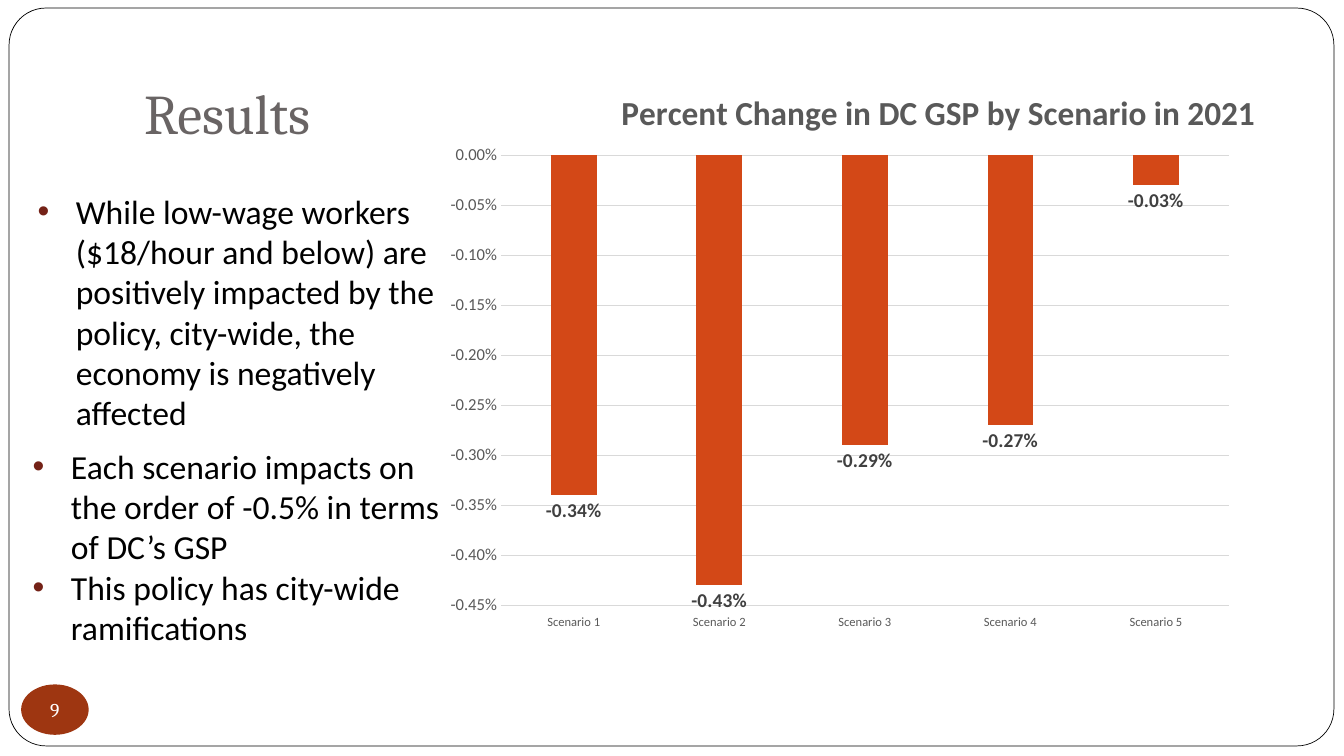
from lxml import etree
from pptx import Presentation
from pptx.chart.data import CategoryChartData
from pptx.dml.color import RGBColor
from pptx.enum.chart import XL_CHART_TYPE, XL_LABEL_POSITION, XL_TICK_LABEL_POSITION, XL_TICK_MARK
from pptx.enum.shapes import MSO_SHAPE
from pptx.enum.text import MSO_ANCHOR, MSO_AUTO_SIZE, PP_ALIGN
from pptx.oxml.ns import qn
from pptx.util import Inches, Pt

WHITE = RGBColor(0xFF, 0xFF, 0xFF)
BLACK = RGBColor(0x00, 0x00, 0x00)
TITLE_GREY = RGBColor(0x69, 0x64, 0x64)
BULLET_RED = RGBColor(0x74, 0x22, 0x17)
BADGE_RED = RGBColor(0x9E, 0x36, 0x11)
BAR_ORANGE = RGBColor(0xD3, 0x48, 0x17)
AXIS_GREY = RGBColor(0x59, 0x59, 0x59)
LABEL_GREY = RGBColor(0x40, 0x40, 0x40)
GRID_GREY = RGBColor(0xD9, 0xD9, 0xD9)

SCENARIO_CHANGES = [-0.0034, -0.0043, -0.0029, -0.0027, -0.0003]


def style_font(font, size, color, name="Calibri", bold=False):
    font.name, font.size, font.bold = name, Pt(size), bold
    font.color.rgb = color


def write(p, text, size=24, color=BLACK, name="Calibri", align=PP_ALIGN.LEFT):
    p.alignment = align
    p.space_before = Pt(0)
    r = p.add_run()
    r.text = text
    style_font(r.font, size, color, name)


def place(sp, left, top, width, height):
    sp.left, sp.top = Inches(left), Inches(top)
    sp.width, sp.height = Inches(width), Inches(height)


def add_bullet(p):
    pPr = p._p.get_or_add_pPr()
    pPr.set("marL", str(Inches(0.38)))
    pPr.set("indent", str(Inches(-0.38)))
    color = etree.SubElement(pPr, qn("a:buClr"))
    etree.SubElement(color, qn("a:srgbClr")).set("val", str(BULLET_RED))
    etree.SubElement(pPr, qn("a:buFont")).set("typeface", "Arial")
    etree.SubElement(pPr, qn("a:buChar")).set("char", "•")


def fill_list(sp, top, height, items):
    place(sp, 0.13, top, 4.42, height)
    tf = sp.text_frame
    tf.word_wrap = True
    tf.auto_size = MSO_AUTO_SIZE.SHAPE_TO_FIT_TEXT
    tf.vertical_anchor = MSO_ANCHOR.MIDDLE
    tf._txBody.bodyPr.set("anchorCtr", "1")
    for i, item in enumerate(items):
        p = tf.add_paragraph() if i else tf.paragraphs[0]
        write(p, item)
        add_bullet(p)


def fill_title(sp, text):
    place(sp, 1.33, 0.3, 11.33, 1.25)
    tf = sp.text_frame
    tf.auto_size = MSO_AUTO_SIZE.NONE
    tf.vertical_anchor = MSO_ANCHOR.BOTTOM
    tf.margin_bottom = Inches(0.1)
    write(tf.paragraphs[0], text, 40, TITLE_GREY, "Cambria")


def add_frame(slide):
    sp = slide.shapes.add_shape(MSO_SHAPE.ROUNDED_RECTANGLE, Inches(0.09), Inches(0.08),
                                Inches(13.14), Inches(7.32))
    sp.adjustments[0] = 0.05
    sp.shadow.inherit = False
    sp.fill.solid()
    sp.fill.fore_color.rgb = WHITE
    sp.line.color.rgb = BLACK
    sp.line.width = Pt(0.5)
    slide.shapes._spTree.insert(2, sp._element)


def add_badge(slide, number):
    sp = slide.shapes.add_shape(MSO_SHAPE.OVAL, Inches(0.21), Inches(6.79),
                                Inches(0.67), Inches(0.5))
    sp.shadow.inherit = False
    sp.fill.solid()
    sp.fill.fore_color.rgb = BADGE_RED
    sp.line.fill.background()
    tf = sp.text_frame
    tf.word_wrap = False
    tf.vertical_anchor = MSO_ANCHOR.MIDDLE
    tf.margin_left = tf.margin_right = tf.margin_top = tf.margin_bottom = 0
    write(tf.paragraphs[0], number, 14, WHITE, "Cambria", PP_ALIGN.CENTER)


def set_layout(parent, index, **settings):
    for old in parent.findall(qn("c:layout")):
        parent.remove(old)
    layout = etree.Element(qn("c:layout"))
    manual = etree.SubElement(layout, qn("c:manualLayout"))
    for tag, value in settings.items():
        etree.SubElement(manual, qn(f"c:{tag}")).set("val", str(value))
    parent.insert(index, layout)


def style_axis(axis, size):
    axis.major_tick_mark = axis.minor_tick_mark = XL_TICK_MARK.NONE
    style_font(axis.tick_labels.font, size, AXIS_GREY)


def style_line(line):
    line.color.rgb = GRID_GREY
    line.width = Pt(0.75)


def add_gsp_chart(slide):
    data = CategoryChartData(number_format="0.00%")
    data.categories = [f"Scenario {n}" for n in range(1, 6)]
    data.add_series("Series 1", SCENARIO_CHANGES)
    chart = slide.shapes.add_chart(XL_CHART_TYPE.COLUMN_CLUSTERED, Inches(4.32), Inches(0.66),
                                   Inches(8.19), Inches(5.71), data).chart
    style_font(chart.font, 10, BLACK)
    chart.has_legend = False

    chart.has_title = True
    title = chart.chart_title
    r = title.text_frame.paragraphs[0].add_run()
    r.text = "Percent Change in DC GSP by Scenario in 2021"
    style_font(r.font, 24, AXIS_GREY, bold=True)
    set_layout(title._element, 1, xMode="edge", yMode="edge", x=0.22, y=0.03)
    set_layout(chart._chartSpace.chart.plotArea, 0, layoutTarget="inner", xMode="edge",
               yMode="edge", x=0.08, y=0.154, w=0.89, h=0.782)

    categories, values = chart.category_axis, chart.value_axis
    style_axis(categories, 9)
    categories.tick_label_position = XL_TICK_LABEL_POSITION.LOW
    style_line(categories.format.line)
    style_axis(values, 12)
    values.minimum_scale, values.maximum_scale, values.major_unit = -0.0045, 0, 0.0005
    values.tick_labels.number_format = "0.00%"
    values.tick_labels.number_format_is_linked = False
    values.format.line.fill.background()
    style_line(values.major_gridlines.format.line)

    plot = chart.plots[0]
    plot.gap_width, plot.overlap, plot.vary_by_categories = 219, -27, False
    series = plot.series[0]
    series.invert_if_negative = False
    series.format.fill.solid()
    series.format.fill.fore_color.rgb = BAR_ORANGE
    labels = series.data_labels
    labels.show_value = True
    labels.number_format = "0.00%"
    labels.number_format_is_linked = False
    labels.position = XL_LABEL_POSITION.OUTSIDE_END
    style_font(labels.font, 14, LABEL_GREY, bold=True)


def main():
    """Build the results slide and save it."""
    prs = Presentation()
    prs.slide_width, prs.slide_height = Inches(13.33), Inches(7.5)
    slide = prs.slides.add_slide(prs.slide_layouts[3])
    title, wage_list, policy_list = slide.placeholders
    add_frame(slide)
    fill_title(title, "Results")
    fill_list(wage_list, 1.83, 2.52, [
        "While low-wage workers ($18/hour and below) are positively impacted by the policy, "
        "city-wide, the economy is negatively affected"])
    fill_list(policy_list, 4.36, 2.12, [
        "Each scenario impacts on the order of -0.5% in terms of DC’s GSP",
        "This policy has city-wide ramifications"])
    add_badge(slide, "9")
    add_gsp_chart(slide)
    prs.save("out.pptx")


if __name__ == "__main__":
    main()
